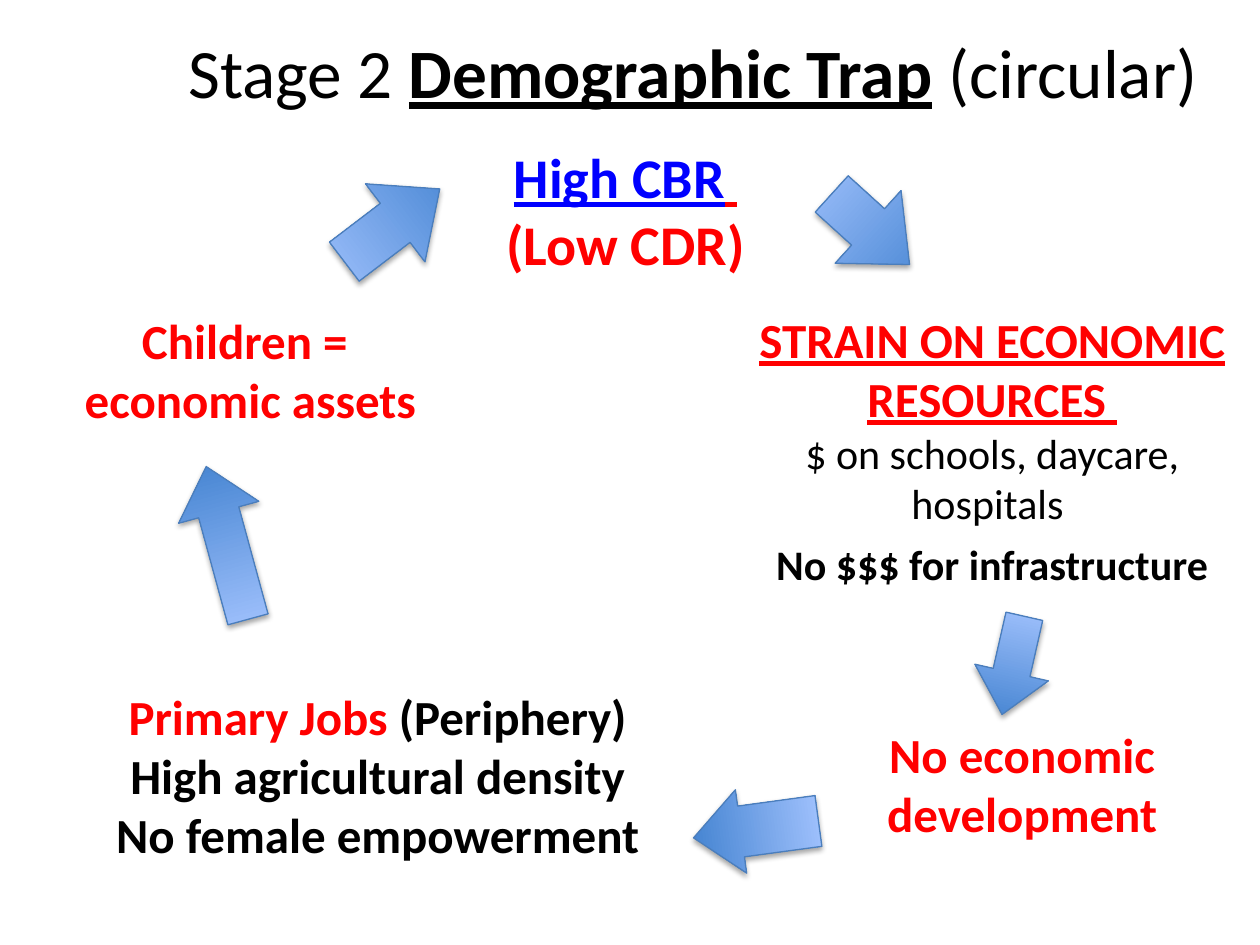
from dataclasses import dataclass
from lxml.etree import SubElement as Sub
from pptx import Presentation as Deck
from pptx.dml.color import RGBColor as Rgb
from pptx.enum.shapes import MSO_SHAPE as Form
from pptx.enum.text import MSO_ANCHOR as Anchor, PP_ALIGN as Align
from pptx.oxml.ns import qn
from pptx.util import Pt


@dataclass(frozen=True)
class Theme:
    font: str = "Calibri"
    black: str = "000000"
    red: str = "FF0000"
    blue: str = "0000FF"
    deep: str = "3F80CE"
    pale: str = "A4C4FF"
    edge: str = "4B7EBC"
    title: float = 39.6
    head: float = 32
    main: float = 28
    note: float = 24


class Page:
    def __init__(self, slide, theme):
        self.slide = slide
        self.theme = theme

    def text(self, box, size, lines, anchor=Anchor.TOP, after=()):
        frame = self.slide.shapes.add_textbox(*map(Pt, box)).text_frame
        frame.word_wrap = True
        frame.vertical_anchor = anchor
        for row, runs in enumerate(lines):
            para = frame.paragraphs[0] if row == 0 else frame.add_paragraph()
            para.alignment = Align.CENTER
            if row in after:
                para.space_after = Pt(6)
            for words, tint, marks, *own in runs:
                run = para.add_run()
                run.text = words
                font = run.font
                font.name = self.theme.font
                font.size = Pt(own[0] if own else size)
                font.bold = "b" in marks
                font.underline = "u" in marks
                font.color.rgb = Rgb.from_string(tint)

    def arrow(self, box, turn, shaft=0.5):
        look = self.theme
        shape = self.slide.shapes.add_shape(Form.DOWN_ARROW, *map(Pt, box))
        shape.rotation = turn
        shape.adjustments[0] = shaft
        shape.adjustments[1] = 0.57
        shape.fill.gradient()
        shape.fill.gradient_angle = 90
        for stop, tint in zip(shape.fill.gradient_stops, (look.deep, look.pale)):
            stop.color.rgb = Rgb.from_string(tint)
        shape.line.color.rgb = Rgb.from_string(look.edge)
        shape.line.width = Pt(0.75)
        self.shade(shape)

    def shade(self, shape):
        shape.shadow.inherit = False
        group = shape._element.spPr.find(qn("a:effectLst"))
        cast = Sub(group, qn("a:outerShdw"), blurRad=str(Pt(3.1)),
                   dist=str(Pt(1.8)), dir="5400000", rotWithShape="0")
        tint = Sub(cast, qn("a:srgbClr"), val=self.theme.black)
        Sub(tint, qn("a:alpha"), val="35000")


def main():
    deck = Deck()
    deck.slide_width, deck.slide_height = Pt(720), Pt(540)
    look = Theme()
    page = Page(deck.slides.add_slide(deck.slide_layouts[6]), look)
    black, red = look.black, look.red

    page.text((72, -4.5, 648, 90), look.title, [[
        ("Stage 2 ", black, ""), ("Demographic Trap", black, "bu"),
        (" ", black, "b"), ("(circular)", black, "")]], Anchor.MIDDLE)
    page.text((224, 78, 267, 85), look.head, [
        [("High CBR", look.blue, "bu"), (" ", red, "bu")],
        [("(Low CDR)", red, "b")]])
    page.text((411, 173.5, 312, 168.5), look.main, [
        [("STRAIN ON ECONOMIC RESOURCES ", red, "bu")],
        [("$ on schools, daycare, hospitals ", black, "", look.note)],
        [("No $$$ for infrastructure", black, "b", look.note)]], after=(1,))
    page.text((450.5, 410.5, 267, 75), look.main, [
        [("No economic development", red, "b")]])
    page.text((52, 389, 327.5, 109), look.main, [
        [("Primary Jobs ", red, "b"), ("(Periphery)", black, "b")],
        [("High agricultural density", black, "b")],
        [("No female empowerment", black, "b")]])
    page.text((9.5, 174, 267, 75), look.main, [
        [("Children = ", red, "b")],
        [("economic assets", red, "b")]])

    page.arrow((469.5, 101, 56, 60), 312.2)
    page.arrow((557.5, 351.5, 43, 57.5), 12.8)
    page.arrow((408, 438, 48, 72), 82.3, 0.61)
    page.arrow((106, 265, 47.5, 90.5), 164.7)
    page.arrow((196, 94.5, 56, 68.5), 232.7)
    deck.save("out.pptx")


if __name__ == "__main__":
    main()
